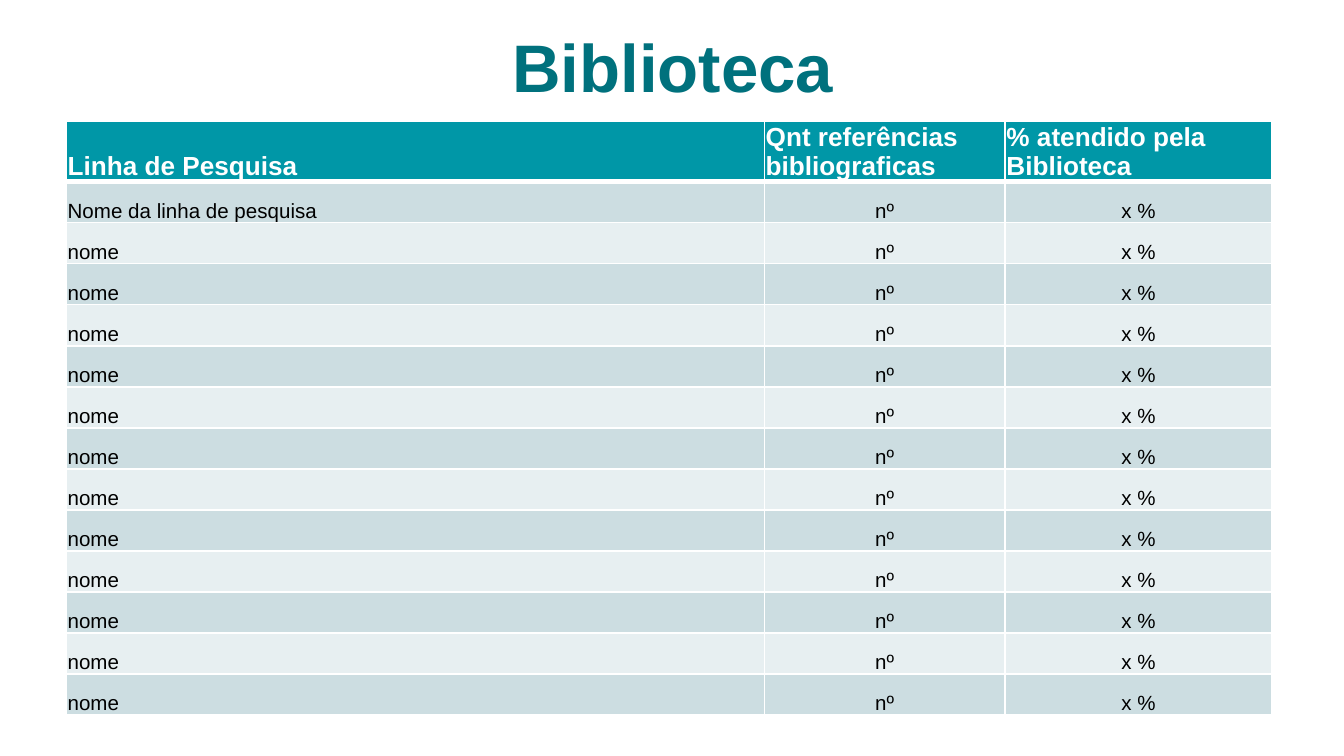
import pptx
import pptx.util
import pptx.dml.color
import pptx.enum.text
from dataclasses import dataclass
from lxml import etree

Pt = pptx.util.Pt
Anchor = pptx.enum.text.MSO_ANCHOR
Align = pptx.enum.text.PP_ALIGN


@dataclass
class Theme:
    face: str = "Arial"
    title: str = "00717D"
    head: str = "0097A7"
    odd: str = "CCDDE1"
    even: str = "E7EFF1"
    white: str = "FFFFFF"
    black: str = "000000"
    title_size: int = 36
    head_size: int = 14
    body_size: int = 11


theme = Theme()


def style(para, size, color, bold, align):
    para.alignment = align
    font = para.font
    font.name, font.size, font.bold = theme.face, Pt(size), bold
    font.color.rgb = pptx.dml.color.RGBColor.from_string(color)


def border(cell, widths):
    """Draw white cell edges; widths maps L, R, T and B to points."""
    props = cell._tc.get_or_add_tcPr()
    space = "http://schemas.openxmlformats.org/drawingml/2006/main"
    for place, (side, width) in enumerate(widths.items()):
        line = etree.Element(f"{{{space}}}ln{side}", w=str(Pt(width)))
        fill = etree.SubElement(line, f"{{{space}}}solidFill")
        etree.SubElement(fill, f"{{{space}}}srgbClr", val=theme.white)
        props.insert(place, line)


deck = pptx.Presentation()
deck.slide_width, deck.slide_height = Pt(720), Pt(405)
slide = deck.slides.add_slide(deck.slide_layouts[5])

title = slide.shapes.title
title.left, title.top, title.width, title.height = Pt(21), Pt(22), Pt(679), Pt(42)
frame = title.text_frame
frame.text = "Biblioteca"
frame.auto_size = pptx.enum.text.MSO_AUTO_SIZE.NONE
frame.vertical_anchor = Anchor.BOTTOM
frame.margin_left = frame.margin_right = Pt(7.2)
frame.margin_top = frame.margin_bottom = Pt(7.2)
style(frame.paragraphs[0], theme.title_size, theme.title, True, Align.CENTER)

rows = [
    ("Linha de Pesquisa", "Qnt referências bibliograficas", "% atendido pela Biblioteca"),
    ("Nome da linha de pesquisa", "nº", "x %"),
] + [("nome", "nº", "x %")] * 12
widths = (374, 129, 143)
high = 22

table = slide.shapes.add_table(
    len(rows), len(widths), Pt(35.5), Pt(65), Pt(sum(widths)), Pt(high * len(rows))
).table
for col, width in zip(table.columns, widths):
    col.width = Pt(width)

for r, texts in enumerate(rows):
    table.rows[r].height = Pt(high)
    head = r == 0
    fill = theme.head if head else theme.odd if r % 2 else theme.even
    size = theme.head_size if head else theme.body_size
    color = theme.white if head else theme.black
    for c, text in enumerate(texts):
        cell = table.cell(r, c)
        cell.text = text
        cell.vertical_anchor = Anchor.BOTTOM
        cell.margin_left = cell.margin_right = cell.margin_top = Pt(0.75)
        cell.margin_bottom = Pt(0)
        cell.fill.solid()
        cell.fill.fore_color.rgb = pptx.dml.color.RGBColor.from_string(fill)
        align = Align.LEFT if head or c == 0 else Align.CENTER
        style(cell.text_frame.paragraphs[0], size, color, head, align)
        border(cell, {"L": 1, "R": 1, "T": 3 if r == 1 else 1, "B": 3 if head else 1})

deck.save("out.pptx")
